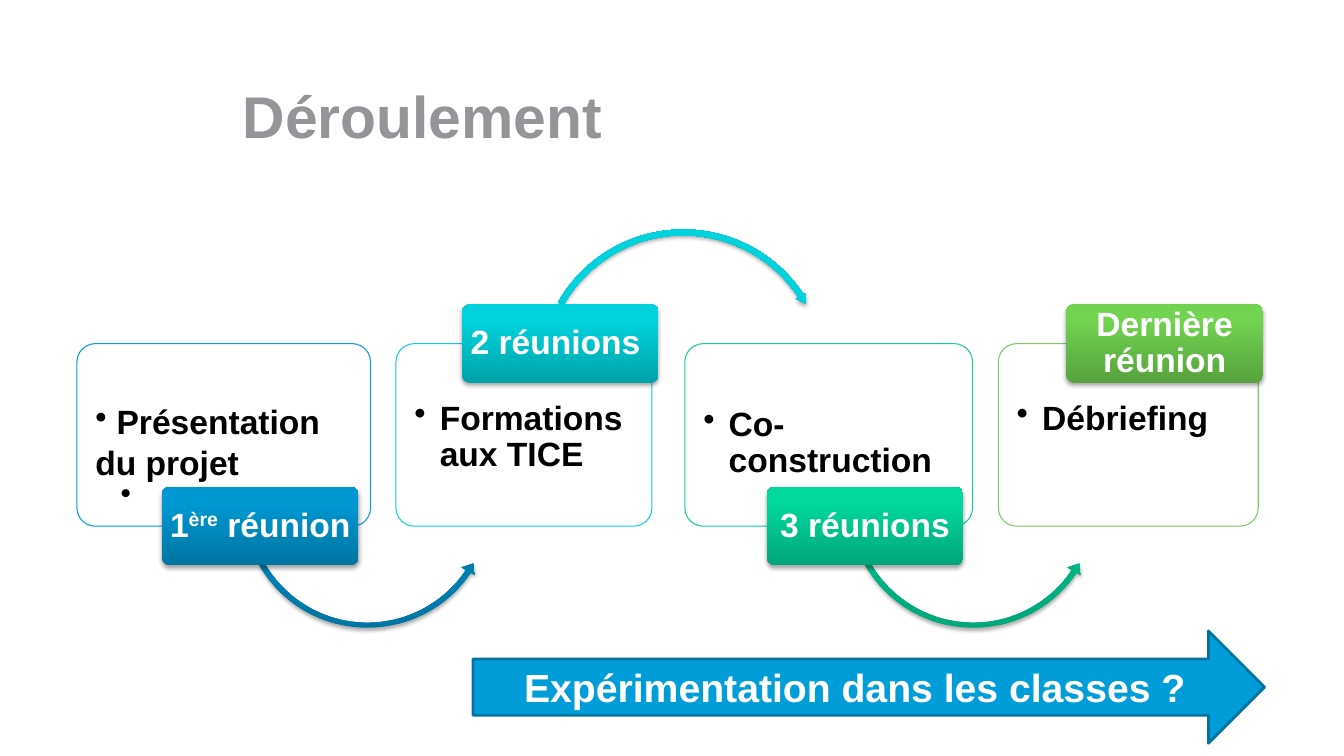
from dataclasses import dataclass

from lxml import etree
from pptx import Presentation
from pptx import util as u
from pptx.dml.color import RGBColor
from pptx.enum import shapes, text
from pptx.oxml import ns

SHAPE = shapes.MSO_SHAPE
CENTER = text.PP_ALIGN.CENTER
MIDDLE = text.MSO_ANCHOR.MIDDLE


@dataclass(frozen=True)
class Theme:
    font: str = "Arial"
    white: str = "FFFFFF"
    black: str = "000000"
    title: str = "949599"
    banner: str = "009DD9"
    banner_line: str = "0074A1"
    title_size: int = 42
    banner_size: int = 28
    body_size: int = 24
    small_size: int = 22


@dataclass(frozen=True)
class Stage:
    color: str
    dark: str
    light: str
    card_x: float
    card_w: float
    text_top: float
    items: tuple
    badge_x: float
    badge_y: float
    badge: str
    arc: tuple = ()


def write(tf, content, *, theme, size, color, align=None, spacing=None,
          bullet=False, margin=0, hang=0, bold=True):
    p = tf.add_paragraph() if tf.text else tf.paragraphs[0]
    if bullet:
        pPr = p._p.get_or_add_pPr()
        pPr.set("marL", str(u.Cm(margin)))
        pPr.set("indent", str(u.Cm(-hang)))
        etree.SubElement(pPr, ns.qn("a:buChar"), char="•")
    p.alignment = align
    p.line_spacing = spacing
    for i, part in enumerate(content.split("^")):
        r = p.add_run()
        r.text = part
        r.font.name = theme.font
        r.font.size = u.Pt(size)
        r.font.bold = bold
        r.font.color.rgb = RGBColor.from_string(color)
        if i % 2:
            r._r.get_or_add_rPr().set("baseline", "30000")


class Deck:
    def __init__(self, prs, theme):
        self.theme = theme
        self.s = prs.slides.add_slide(prs.slide_layouts[6])

    def shape(self, kind, box, fill=None, line=None, width=0.75):
        sp = self.s.shapes.add_shape(kind, *map(u.Cm, box))
        sp.shadow.inherit = False
        if fill:
            sp.fill.solid()
            sp.fill.fore_color.rgb = RGBColor.from_string(fill)
        if line:
            sp.line.color.rgb = RGBColor.from_string(line)
            sp.line.width = u.Pt(width)
        else:
            sp.line.fill.background()
        return sp

    def frame(self, sp, insets, anchor=MIDDLE):
        tf = sp.text_frame
        tf.word_wrap = True
        tf.vertical_anchor = anchor
        tf.margin_left, tf.margin_top, tf.margin_right, tf.margin_bottom = map(u.Cm, insets)
        return tf

    def glossy(self, kind, box, stage):
        sp = self.shape(kind, box)
        sp.fill.gradient()
        sp.fill.gradient_angle = 90
        for stop, color, position in zip(sp.fill.gradient_stops,
                                         (stage.dark, stage.light), (0, 0.8)):
            stop.color.rgb = RGBColor.from_string(color)
            stop.position = position
        effects = sp._element.spPr.find(ns.qn("a:effectLst"))
        shadow = etree.SubElement(effects, ns.qn("a:outerShdw"), blurRad=str(u.Pt(3.1)),
                                  dist=str(u.Pt(1.8)), dir="5400000", rotWithShape="0")
        color = etree.SubElement(shadow, ns.qn("a:srgbClr"), val=self.theme.black)
        etree.SubElement(color, ns.qn("a:alpha"), val="35000")
        return sp

    def title(self, content):
        sp = self.s.shapes.add_textbox(*map(u.Cm, (5.87, 1.42, 22.86, 2.97)))
        write(self.frame(sp, (0.25, 0.13, 0.25, 0.13)), content, theme=self.theme,
              size=self.theme.title_size, color=self.theme.title)

    def card(self, stage):
        sp = self.shape(SHAPE.ROUNDED_RECTANGLE, (stage.card_x, 8.66, stage.card_w, 4.6),
                        self.theme.white, stage.color)
        sp.adjustments[0] = 0.1
        tf = self.frame(sp, (0.33, stage.text_top, 0.33, 0), text.MSO_ANCHOR.TOP)
        for content, style in stage.items:
            write(tf, content, theme=self.theme, color=self.theme.black, bullet=True,
                  **{"size": self.theme.body_size, **style})

    def arc(self, stage):
        kind, x, y, side, adjustments = stage.arc
        sp = self.glossy(kind, (x, y, side, side), stage)
        for i, value in enumerate(adjustments):
            sp.adjustments[i] = value

    def badge(self, stage):
        sp = self.glossy(SHAPE.ROUNDED_RECTANGLE,
                         (stage.badge_x, stage.badge_y, 4.96, 1.98), stage)
        sp.adjustments[0] = 0.1
        write(self.frame(sp, (0.11, 0.08, 0.11, 0.08)), stage.badge, theme=self.theme,
              size=self.theme.body_size, color=self.theme.white, align=CENTER, spacing=0.9)

    def banner(self, content):
        sp = self.shape(SHAPE.RIGHT_ARROW, (11.92, 15.9, 19.95, 2.83),
                        self.theme.banner, self.theme.banner_line, 2)
        write(self.frame(sp, (0.25, 0.13, 0.25, 0.13)), content, theme=self.theme,
              size=self.theme.banner_size, color=self.theme.white, align=CENTER)


def main():
    prs = Presentation()
    prs.slide_width, prs.slide_height = u.Cm(33.87), u.Cm(19.05)
    theme = Theme()
    deck = Deck(prs, theme)

    hanging = {"margin": 0.64, "hang": 0.64, "spacing": 0.9}
    trailing = {"margin": 0.64, "spacing": 0.9, "size": theme.small_size, "bold": False}
    high, low = 7.67, 12.27
    under = (0.02, 2.55, 20.31, 90.25, 0.03)
    over = (0.02, 2.24, 196, 125.76, 0.02)
    stages = (
        Stage("009DD9", "0075A2", "0098D2", 1.94, 7.4, 1.32,
              ((" Présentation du projet", {}), (" ", trailing)),
              4.08, low, "1^ère^ réunion",
              (SHAPE.LEFT_CIRCULAR_ARROW, 6, 9.43, 6.52, under)),
        Stage("0BD0D9", "00A3AA", "00D3DD", 9.98, 6.45, 1.32,
              (("Formations aux TICE", hanging),),
              11.64, high, "2 réunions ",
              (SHAPE.CIRCULAR_ARROW, 13.52, 5.71, 7.4, over)),
        Stage("10CF9B", "00A679", "00D89D", 17.26, 7.25, 1.47,
              (("Co-construction", hanging),),
              19.32, low, "3 réunions",
              (SHAPE.LEFT_CIRCULAR_ARROW, 21.27, 9.43, 6.52, under)),
        Stage("7CCA62", "57A23D", "71D350", 25.16, 6.55, 1.32,
              (("Débriefing", hanging),),
              26.87, high, "Dernière réunion"),
    )

    deck.title("Déroulement")
    for stage in stages:
        deck.card(stage)
        if stage.arc:
            deck.arc(stage)
        deck.badge(stage)
    deck.banner("Expérimentation dans les classes ?")
    prs.save("out.pptx")


if __name__ == "__main__":
    main()
